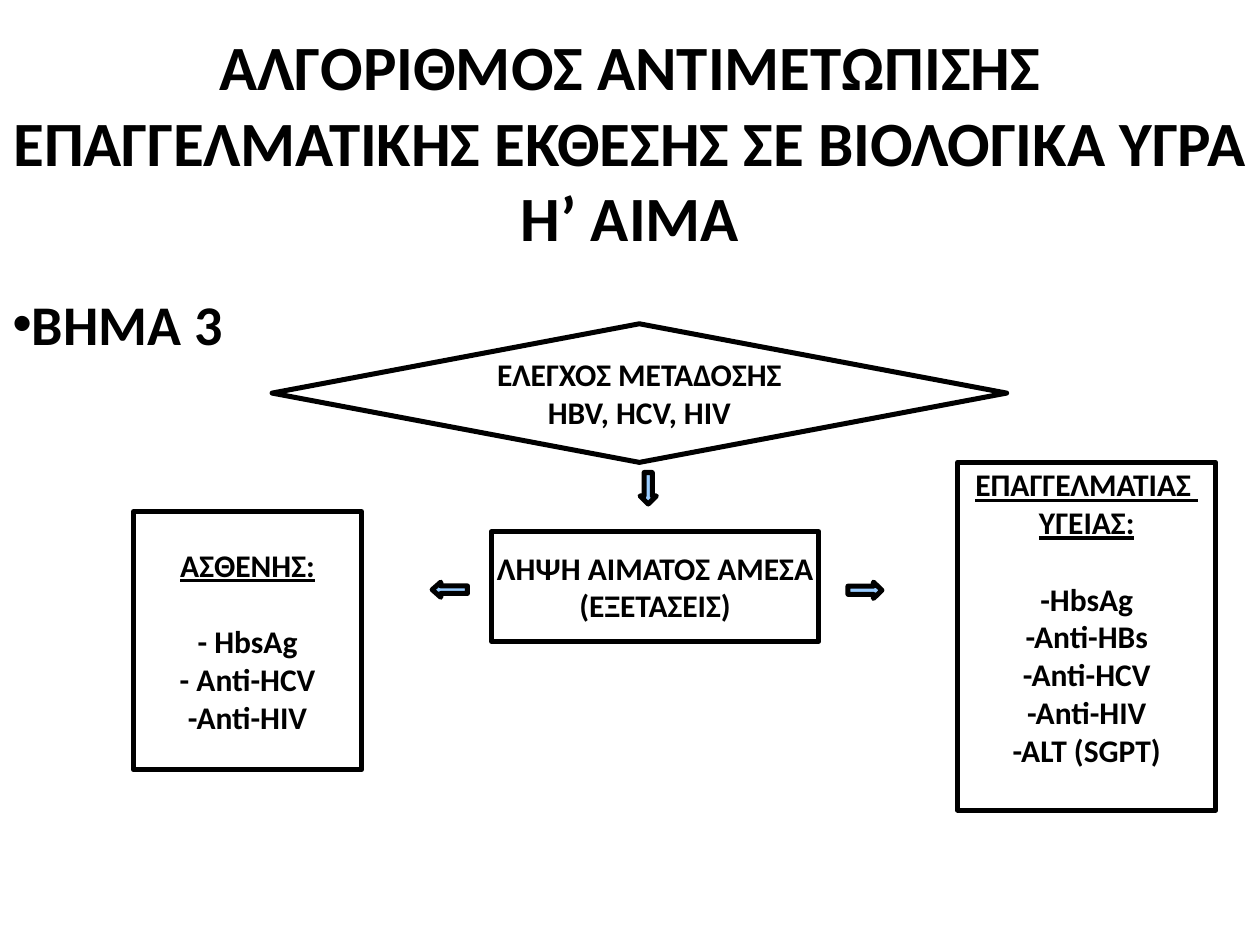
from dataclasses import dataclass

from lxml import etree
from pptx import Presentation
from pptx import util as u
from pptx.dml.color import RGBColor
from pptx.enum import shapes, text
from pptx.oxml.ns import qn

BLACK = RGBColor(0x00, 0x00, 0x00)
WHITE = RGBColor(0xFF, 0xFF, 0xFF)
SKY = RGBColor(0x99, 0xCC, 0xFF)

FONT = "Calibri"
COLUMNS, ROWS = 100, 75
CELL = u.Inches(0.1)
OUTLINE = u.Pt(2.86)
BODY_SIZE = 18
LINE_GAP = u.Pt(22)  # one line of body text


@dataclass(frozen=True)
class Area:
    """A place on the slide, in grid columns and rows."""
    column: float
    row: float
    columns: float
    rows: float

    def lengths(self) -> list[int]:
        cells = (self.column, self.row, self.columns, self.rows)
        return [round(cell * CELL) for cell in cells]


@dataclass(frozen=True)
class Step:
    """An outlined box; its heading lines are underlined and set apart."""
    kind: shapes.MSO_SHAPE
    area: Area
    lines: tuple[str, ...]
    heading: tuple[str, ...] = ()
    space_below: int = 0


@dataclass(frozen=True)
class Arrow:
    kind: shapes.MSO_SHAPE
    area: Area
    head: float


STEPS = (
    Step(shapes.MSO_SHAPE.DIAMOND, Area(21.6, 25.7, 58.3, 11),
         ("ΕΛΕΓΧΟΣ ΜΕΤΑΔΟΣΗΣ", "HBV, HCV, HIV")),
    Step(shapes.MSO_SHAPE.RECTANGLE, Area(39, 42.2, 26, 8.7),
         ("ΛΗΨΗ ΑΙΜΑΤΟΣ ΑΜΕΣΑ ", "(ΕΞΕΤΑΣΕΙΣ)")),
    Step(shapes.MSO_SHAPE.RECTANGLE, Area(10.6, 40.6, 18.1, 20.5),
         ("- HbsAg", "- Anti-HCV", "-Anti-HIV"), heading=("ΑΣΘΕΝΗΣ:",)),
    Step(shapes.MSO_SHAPE.RECTANGLE, Area(76, 36.7, 20.5, 27.6),
         ("-HbsAg", "-Anti-HBs", "-Anti-HCV", "-Anti-HIV", "-ALT (SGPT)"),
         heading=("ΕΠΑΓΓΕΛΜΑΤΙΑΣ ", "ΥΓΕΙΑΣ:"), space_below=LINE_GAP),
)

ARROWS = (
    Arrow(shapes.MSO_SHAPE.DOWN_ARROW, Area(50.8, 37.5, 1.3, 2.5), 0.49),
    Arrow(shapes.MSO_SHAPE.LEFT_ARROW, Area(34.3, 46.2, 2.8, 1.2), 0.57),
    Arrow(shapes.MSO_SHAPE.RIGHT_ARROW, Area(67.3, 46.2, 2.7, 1.3), 0.52),
)


def write(frame, lines: tuple[str, ...], size: float, align) -> None:
    frame.word_wrap = True
    frame.text = "\n".join(lines)
    for para in frame.paragraphs:
        para.alignment = align
        for span in para.runs:
            span.font.name = FONT
            span.font.size = u.Pt(size)
            span.font.bold = True
            span.font.color.rgb = BLACK


def add_text(page, area: Area, line: str, size: float, align, anchor):
    box = page.shapes.add_textbox(*area.lengths())
    box.text_frame.vertical_anchor = anchor
    write(box.text_frame, (line,), size, align)
    return box


def add_bullet(para) -> None:
    properties = para._p.get_or_add_pPr()
    properties.set("marL", "0")
    properties.set("indent", "0")
    font = etree.SubElement(properties, qn("a:buFont"))
    font.set("typeface", "Arial")
    etree.SubElement(properties, qn("a:buChar")).set("char", "•")


def add_outlined(page, kind, area: Area, fill: RGBColor):
    shape = page.shapes.add_shape(kind, *area.lengths())
    shape.shadow.inherit = False
    shape.fill.solid()
    shape.fill.fore_color.rgb = fill
    shape.line.color.rgb = BLACK
    shape.line.width = OUTLINE
    return shape


def add_step(page, step: Step) -> None:
    frame = add_outlined(page, step.kind, step.area, WHITE).text_frame
    margin = u.Inches(0.02)
    frame.margin_left = frame.margin_right = frame.margin_top = margin
    frame.margin_bottom = margin + step.space_below
    frame.vertical_anchor = text.MSO_ANCHOR.MIDDLE
    write(frame, step.heading + step.lines, BODY_SIZE, text.PP_ALIGN.CENTER)
    heading = frame.paragraphs[:len(step.heading)]
    for para in heading:
        para.runs[0].font.underline = True
    if heading:
        heading[-1].space_after = LINE_GAP


def add_arrow(page, arrow: Arrow) -> None:
    shape = add_outlined(page, arrow.kind, arrow.area, SKY)
    shape.adjustments[0] = 0.5
    shape.adjustments[1] = arrow.head


def main() -> None:
    deck = Presentation()
    deck.slide_width = COLUMNS * CELL
    deck.slide_height = ROWS * CELL
    page = deck.slides.add_slide(deck.slide_layouts[6])

    # Title and step number
    add_text(page, Area(0, 3, COLUMNS, 16.4),
             "ΑΛΓΟΡΙΘΜΟΣ ΑΝΤΙΜΕΤΩΠΙΣΗΣ ΕΠΑΓΓΕΛΜΑΤΙΚΗΣ ΕΚΘΕΣΗΣ ΣΕ ΒΙΟΛΟΓΙΚΑ ΥΓΡΑ Η’ ΑΙΜΑ",
             36, text.PP_ALIGN.CENTER, text.MSO_ANCHOR.MIDDLE)
    number = add_text(page, Area(0, 22.5, COLUMNS, 46.5), "ΒΗΜΑ 3",
                      32, text.PP_ALIGN.LEFT, text.MSO_ANCHOR.TOP)
    add_bullet(number.text_frame.paragraphs[0])

    # Flow chart
    for step in STEPS:
        add_step(page, step)
    for arrow in ARROWS:
        add_arrow(page, arrow)

    deck.save("out.pptx")


if __name__ == "__main__":
    main()
